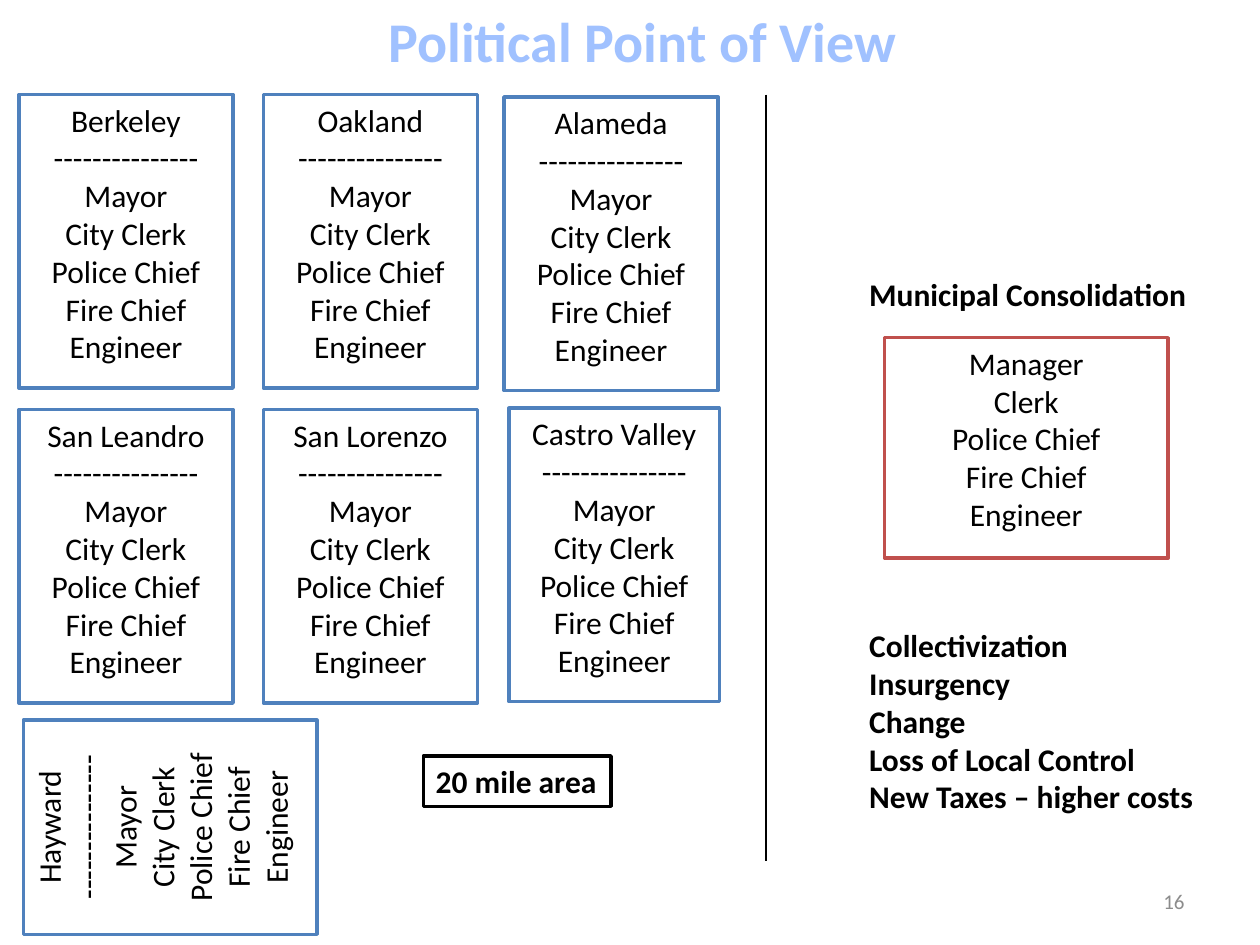
from lxml import etree
from pptx import Presentation
from pptx.dml.color import RGBColor
from pptx.enum.shapes import MSO_CONNECTOR, MSO_SHAPE
from pptx.enum.text import MSO_ANCHOR, PP_ALIGN
from pptx.oxml.ns import qn
from pptx.util import Inches, Pt

LEFT, CENTER, RIGHT = PP_ALIGN.LEFT, PP_ALIGN.CENTER, PP_ALIGN.RIGHT
TOP, MIDDLE = MSO_ANCHOR.TOP, MSO_ANCHOR.MIDDLE
BLACK = RGBColor(0x00, 0x00, 0x00)
WHITE = RGBColor(0xFF, 0xFF, 0xFF)
GREY = RGBColor(0x8C, 0x8C, 0x8C)
BLUE = RGBColor(0x4F, 0x81, 0xBD)
RED = RGBColor(0xC0, 0x50, 0x4D)
TITLE_BLUE = RGBColor(0xA0, 0xC1, 0xFF)

# Content
TITLE = "Political Point of View"
CITY_OFFICES = ["---------------", "Mayor", "City Clerk", "Police Chief",
                "Fire Chief", "Engineer"]
CITY_WIDTH, CITY_HEIGHT = 1.7, 2.33
CITIES = [  # name, left, top, width, rotation
    ("Berkeley", 0.15, 0.75, CITY_WIDTH, 0),
    ("Oakland", 2.09, 0.75, CITY_WIDTH, 0),
    ("Alameda", 4.0, 0.77, CITY_WIDTH, 0),
    ("San Leandro", 0.15, 3.25, CITY_WIDTH, 0),
    ("San Lorenzo", 2.09, 3.25, CITY_WIDTH, 0),
    ("Castro Valley", 4.04, 3.24, 1.67, 0),
    ("Hayward", 0.5, 5.4, CITY_WIDTH, 270),
]
MERGED_OFFICES = ["Manager", "Clerk", "Police Chief", "Fire Chief", "Engineer"]
CONSEQUENCES = ["Collectivization", "Insurgency", "Change",
                "Loss of Local Control", "New Taxes – higher costs"]


def write(shape, lines, size=18, color=BLACK, bold=False, align=LEFT,
          anchor=TOP, wrap=False):
    frame = shape.text_frame
    frame.word_wrap = wrap
    frame.vertical_anchor = anchor
    for i, line in enumerate(lines):
        paragraph = frame.paragraphs[0] if i == 0 else frame.add_paragraph()
        paragraph.alignment = align
        run = paragraph.add_run()
        run.text = line
        run.font.name = "Calibri"
        run.font.size = Pt(size)
        run.font.bold = bold
        run.font.color.rgb = color


def add_label(slide, box, lines, **text_format):
    label = slide.shapes.add_textbox(*map(Inches, box))
    write(label, lines, **text_format)
    return label


def add_office_box(slide, box, lines, outline, rotation=0):
    office_box = slide.shapes.add_shape(MSO_SHAPE.RECTANGLE, *map(Inches, box))
    office_box.shadow.inherit = False
    office_box.rotation = rotation
    office_box.fill.solid()
    office_box.fill.fore_color.rgb = WHITE
    office_box.line.color.rgb = outline
    office_box.line.width = Pt(2)
    write(office_box, lines, align=CENTER, wrap=True)


def main():
    prs = Presentation()
    prs.slide_width, prs.slide_height = Inches(10), Inches(7.5)
    slide = prs.slides.add_slide(prs.slide_layouts[6])

    # Title and page number
    add_label(slide, (2.91, 0, 4.38, 0.64), [TITLE], size=32,
              color=TITLE_BLUE, bold=True, align=CENTER)
    add_label(slide, (7.17, 6.95, 2.33, 0.4), ["16"], size=12, color=GREY,
              align=RIGHT, anchor=MIDDLE, wrap=True)

    # Separate cities
    for city, left, top, width, rotation in CITIES:
        add_office_box(slide, (left, top, width, CITY_HEIGHT),
                       [city] + CITY_OFFICES, BLUE, rotation)
    area = add_label(slide, (3.36, 6, 1.49, 0.4), ["20 mile area"], bold=True)
    area.line.color.rgb = BLACK
    area.line.width = Pt(2)

    # Divider
    divider = slide.shapes.add_connector(
        MSO_CONNECTOR.STRAIGHT, *map(Inches, (6.08, 0.75, 6.08, 6.83)))
    divider.line.color.rgb = BLACK
    divider.line.width = Pt(1.5)
    etree.SubElement(divider._element.spPr, qn("a:effectLst"))

    # Consolidated government
    add_label(slide, (6.8, 2.13, 2.74, 0.4), ["Municipal Consolidation"],
              bold=True)
    add_office_box(slide, (7.02, 2.68, 2.25, 1.75), MERGED_OFFICES, RED)
    add_label(slide, (6.8, 4.92, 2.79, 1.92), CONSEQUENCES, bold=True)

    prs.save("out.pptx")


if __name__ == "__main__":
    main()
